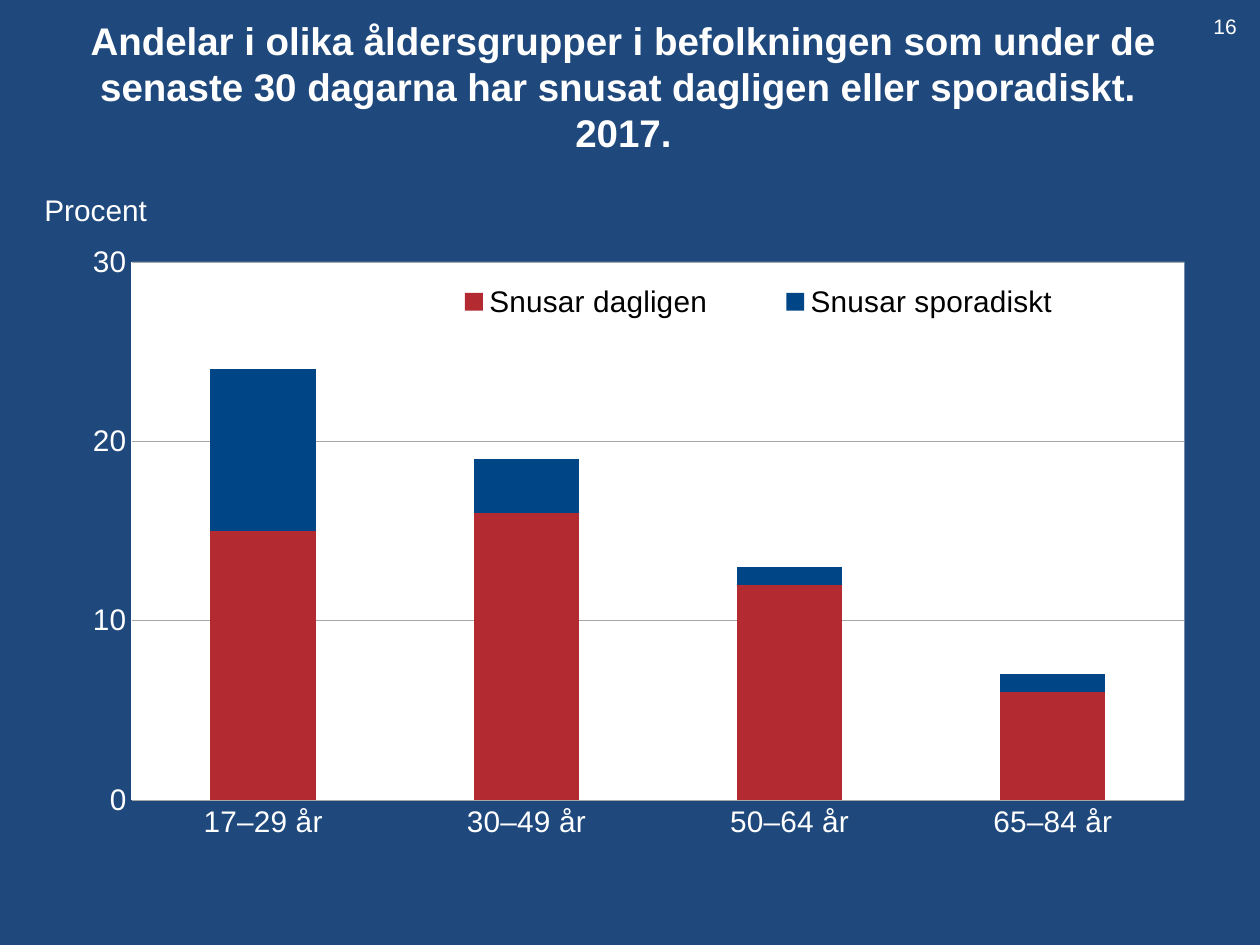
from dataclasses import dataclass
from typing import Any, NamedTuple

from lxml.etree import _Element
from pptx import Presentation
from pptx.chart.axis import _BaseAxis
from pptx.chart.chart import Chart
from pptx.chart.data import CategoryChartData
from pptx.dml.color import RGBColor
from pptx.enum.chart import XL_CHART_TYPE, XL_LEGEND_POSITION, XL_TICK_MARK
from pptx.enum.text import MSO_ANCHOR, MSO_AUTO_SIZE, PP_ALIGN
from pptx.oxml import parse_xml
from pptx.oxml.ns import nsdecls, qn
from pptx.slide import Slide
from pptx.util import Emu, Pt

PIXELS_PER_INCH = 126


class Box(NamedTuple):
    left: int
    top: int
    width: int
    height: int


class Layout(NamedTuple):
    x: float
    y: float
    w: float
    h: float


class Label(NamedTuple):
    text: str
    box: Box
    size: int
    anchor: MSO_ANCHOR


class Series(NamedTuple):
    name: str
    values: tuple[int | None, ...]
    color: str
    in_legend: bool = True


@dataclass(frozen=True)
class Theme:
    font: str = "Arial"
    background: str = "1F497D"
    light: str = "FFFFFF"
    dark: str = "000000"
    grid: str = "A6A6A6"
    daily: str = "B32B31"
    sporadic: str = "004687"
    orange: str = "F29200"
    green: str = "9BBB59"
    title_size: int = 22
    body_size: int = 17
    number_size: int = 12


THEME = Theme()
TITLE = (
    "Andelar i olika åldersgrupper i befolkningen som under de senaste "
    "30 dagarna har snusat dagligen eller sporadiskt. \v2017."
)
TITLE_BOX = Box(32, 7, 1183, 158)
CHART_BOX = Box(45, 197, 1170, 722)
PLOT_LAYOUT = Layout(0.074, 0.09, 0.9, 0.745)
LEGEND_LAYOUT = Layout(0.3, 0.11, 0.62, 0.07)
AGE_GROUPS = ("17–29 år", "30–49 år", "50–64 år", "65–84 år")
NO_VALUES = (None,) * len(AGE_GROUPS)
SERIES = (
    Series("Snusar dagligen", (15, 16, 12, 6), THEME.daily),
    Series("Series 2", NO_VALUES, THEME.orange, in_legend=False),
    Series("Snusar sporadiskt", (9, 3, 1, 1), THEME.sporadic),
    Series("Series 4", NO_VALUES, THEME.green, in_legend=False),
)
LABELS = (
    Label("16", Box(1201, 7, 59, 38), THEME.number_size, MSO_ANCHOR.TOP),
    Label("Procent", Box(32, 185, 140, 49), THEME.body_size, MSO_ANCHOR.MIDDLE),
)


def px(length: int) -> Emu:
    """Turn a length in pixels into EMU."""
    return Emu(round(length * 914400 / PIXELS_PER_INCH))


def apply_format(target: Any, values: dict[str, Any]) -> None:
    """Set every named attribute on the target."""
    for name, value in values.items():
        setattr(target, name, value)


def style_font(font: Any, size: int, color: str, bold: bool = False) -> None:
    """Give a font the theme face with a size, colour and weight."""
    apply_format(font, {"name": THEME.font, "size": Pt(size), "bold": bold})
    font.color.rgb = RGBColor.from_string(color)


def style_fill(fill: Any, color: str) -> None:
    """Give a fill a solid colour."""
    fill.solid()
    fill.fore_color.rgb = RGBColor.from_string(color)


def style_line(line: Any, color: str, width: float) -> None:
    """Give a line a solid colour and a width in points."""
    line.color.rgb = RGBColor.from_string(color)
    line.width = Pt(width)


def add_title(slide: Slide) -> None:
    """Place and format the title placeholder."""
    title = slide.shapes.title
    apply_format(title, {name: px(value) for name, value in TITLE_BOX._asdict().items()})
    frame = title.text_frame
    frame.text = TITLE
    apply_format(frame, {"word_wrap": True, "auto_size": MSO_AUTO_SIZE.NONE,
                         "vertical_anchor": MSO_ANCHOR.MIDDLE})
    paragraph = frame.paragraphs[0]
    apply_format(paragraph, {"alignment": PP_ALIGN.CENTER, "space_before": Pt(0)})
    for run in paragraph.runs:
        style_font(run.font, THEME.title_size, THEME.light, bold=True)


def add_label(slide: Slide, label: Label) -> None:
    """Add a single-line text box."""
    frame = slide.shapes.add_textbox(*map(px, label.box)).text_frame
    frame.text = label.text
    apply_format(frame, {"word_wrap": True, "vertical_anchor": label.anchor})
    style_font(frame.paragraphs[0].runs[0].font, label.size, THEME.light)


def layout_element(layout: Layout, target: str = "") -> _Element:
    """Build a manual chart layout from fractions of the chart area."""
    modes = '<c:xMode val="edge"/><c:yMode val="edge"/>'
    sizes = "".join(f'<c:{name} val="{value}"/>' for name, value in layout._asdict().items())
    return parse_xml(f'<c:layout {nsdecls("c")}><c:manualLayout>{target}{modes}{sizes}'
                     "</c:manualLayout></c:layout>")


def remove_layouts(element: _Element) -> None:
    """Drop the automatic layouts of a chart part."""
    for layout in element.findall(qn("c:layout")):
        element.remove(layout)


def style_axis(axis: _BaseAxis, line_width: float) -> None:
    """Format the labels, ticks and line of an axis."""
    apply_format(axis, {"major_tick_mark": XL_TICK_MARK.NONE, "minor_tick_mark": XL_TICK_MARK.NONE})
    style_font(axis.tick_labels.font, THEME.body_size, THEME.light)
    style_line(axis.format.line, THEME.light, line_width)


def style_plot_area(chart: Chart) -> None:
    """Place the plot area and fill it."""
    plot_area = chart._chartSpace.chart.plotArea
    remove_layouts(plot_area)
    plot_area.insert(0, layout_element(PLOT_LAYOUT, '<c:layoutTarget val="inner"/>'))
    plot_area.append(parse_xml(
        f'<c:spPr {nsdecls("c", "a")}><a:solidFill><a:srgbClr val="{THEME.light}"/>'
        "</a:solidFill><a:ln><a:noFill/></a:ln></c:spPr>"))


def add_legend(chart: Chart) -> None:
    """Show the named series inside the top of the plot area."""
    chart.has_legend = True
    legend = chart.legend
    apply_format(legend, {"position": XL_LEGEND_POSITION.TOP, "include_in_layout": False})
    style_font(legend.font, THEME.body_size, THEME.dark)
    remove_layouts(legend._element)
    previous = legend._element.find(qn("c:legendPos"))
    entries = [parse_xml(f'<c:legendEntry {nsdecls("c")}><c:idx val="{index}"/>'
                         '<c:delete val="1"/></c:legendEntry>')
               for index, series in enumerate(SERIES) if not series.in_legend]
    for element in (*entries, layout_element(LEGEND_LAYOUT)):
        previous.addnext(element)
        previous = element


def add_usage_chart(slide: Slide) -> None:
    """Add the stacked columns for each age group."""
    data = CategoryChartData(number_format="#,##0")
    data.categories = AGE_GROUPS
    for series in SERIES:
        data.add_series(series.name, series.values)
    chart = slide.shapes.add_chart(XL_CHART_TYPE.COLUMN_STACKED, *map(px, CHART_BOX), data).chart
    chart.has_title = False
    style_font(chart.font, THEME.body_size, THEME.light)
    plot, value_axis = chart.plots[0], chart.value_axis
    apply_format(plot, {"gap_width": 150, "overlap": 100, "vary_by_categories": False})
    for drawn, series in zip(plot.series, SERIES):
        style_fill(drawn.format.fill, series.color)
    style_axis(chart.category_axis, 0.75)
    style_axis(value_axis, 0.22)
    apply_format(value_axis, {"minimum_scale": 0, "maximum_scale": 30, "major_unit": 10})
    apply_format(value_axis.tick_labels, {"number_format": "#,##0", "number_format_is_linked": False})
    style_line(value_axis.major_gridlines.format.line, THEME.grid, 0.22)
    style_plot_area(chart)
    add_legend(chart)


presentation = Presentation()
apply_format(presentation, {"slide_width": px(1260), "slide_height": px(945)})
usage_slide = presentation.slides.add_slide(presentation.slide_layouts[5])
style_fill(usage_slide.background.fill, THEME.background)
add_title(usage_slide)
add_usage_chart(usage_slide)
for text_label in LABELS:
    add_label(usage_slide, text_label)
presentation.save("out.pptx")
